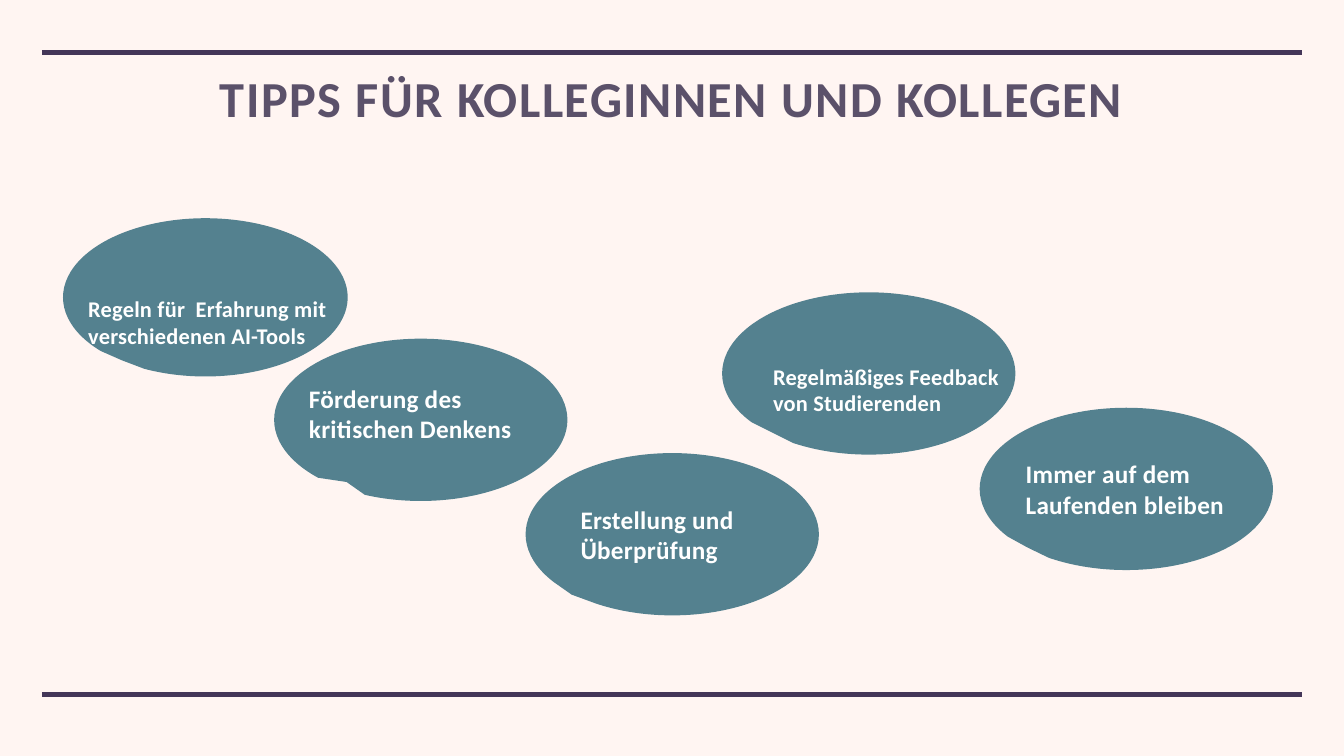
import pptx
import pptx.util
from pptx.dml.color import RGBColor
from pptx.enum.shapes import MSO_CONNECTOR, MSO_SHAPE
from pptx.enum.text import MSO_ANCHOR, PP_ALIGN
from pptx.oxml.ns import qn
from lxml import etree

Inches = pptx.util.Inches
Pt = pptx.util.Pt

COLORS = {"back": "FFF5F2", "rule": "443658", "title": "5B516A",
          "bubble": "54818F", "text": "FFFFFF"}


def color(name):
    return RGBColor.from_string(COLORS[name])


def write(shape, text, size=36, ink="text", space=0.4,
          align=PP_ALIGN.LEFT, anchor=MSO_ANCHOR.MIDDLE, lead=1.0):
    """Fill the shape with one bold paragraph; space is the letter spacing in points."""
    frame = shape.text_frame
    frame.word_wrap = True
    frame.vertical_anchor = anchor
    frame.margin_left = frame.margin_right = Inches(0.06)
    frame.margin_top = frame.margin_bottom = Inches(0.06)
    para = frame.paragraphs[0]
    para.text = text
    para.alignment = align
    para.line_spacing = lead
    for run in para.runs:
        run.font.name = "Calibri"
        run.font.size = Pt(size)
        run.font.bold = True
        run.font.color.rgb = color(ink)
        run._r.get_or_add_rPr().set("spc", str(round(space * 100)))


deck = pptx.Presentation()
deck.slide_width, deck.slide_height = Inches(26.67), Inches(15)
slide = deck.slides.add_slide(deck.slide_layouts[5])
slide.background.fill.solid()
slide.background.fill.fore_color.rgb = color("back")

# Rules above and below
for y in (1.04, 13.78):
    rule = slide.shapes.add_connector(
        MSO_CONNECTOR.STRAIGHT, Inches(0.83), Inches(y), Inches(25.83), Inches(y))
    rule.line.color.rgb = color("rule")
    rule.line.width = Pt(6)
    etree.SubElement(rule._element.spPr, qn("a:effectLst"))

title = slide.shapes.title
title.left, title.top = Inches(2.28), Inches(1.4)
title.width, title.height = Inches(22.1), Inches(1.52)
write(title, "TIPPS FÜR KOLLEGINNEN UND KOLLEGEN", size=72, ink="title", space=2.1,
      align=PP_ALIGN.CENTER, anchor=MSO_ANCHOR.TOP, lead=0.9)

# Bubbles: left, top, width, height, tail x, tail y, own text
bubbles = [
    (1.25, 4.33, 5.65, 3.14, -0.293, 0.398, ""),
    (14.33, 5.8, 5.82, 3.22, -0.329, 0.364, ""),
    (10.43, 8.99, 5.82, 3.22, -0.343, 0.372, ""),
    (5.44, 6.72, 5.82, 3.22, -0.253, 0.383, ""),
    (19.44, 8.09, 5.82, 3.22, -0.337, 0.361, "Immer auf dem Laufenden bleiben"),
]
for *box, tail_x, tail_y, text in bubbles:
    bubble = slide.shapes.add_shape(MSO_SHAPE.OVAL_CALLOUT, *map(Inches, box))
    bubble.adjustments[0] = tail_x
    bubble.adjustments[1] = tail_y
    bubble.shadow.inherit = False
    bubble.fill.solid()
    bubble.fill.fore_color.rgb = color("bubble")
    bubble.line.fill.background()
    if text:
        write(bubble, text)

# Labels laid over the other bubbles: left, top, width, height, size, spacing, text
labels = [
    (1.69, 4.87, 5.37, 3.04, 32, 0.3, "Regeln für  Erfahrung mit verschiedenen AI-Tools"),
    (15.28, 6.21, 5.37, 3.04, 32, 0.3, "Regelmäßiges Feedback von Studierenden"),
    (11.46, 9.88, 3.75, 1.44, 36, 0.4, "Erstellung und\nÜberprüfung"),
    (6.07, 7.48, 4.91, 1.44, 36, 0.4, "Förderung des\nkritischen Denkens"),
]
for *box, size, space, text in labels:
    label = slide.shapes.add_textbox(*map(Inches, box))
    write(label, text, size=size, space=space)

deck.save("out.pptx")
